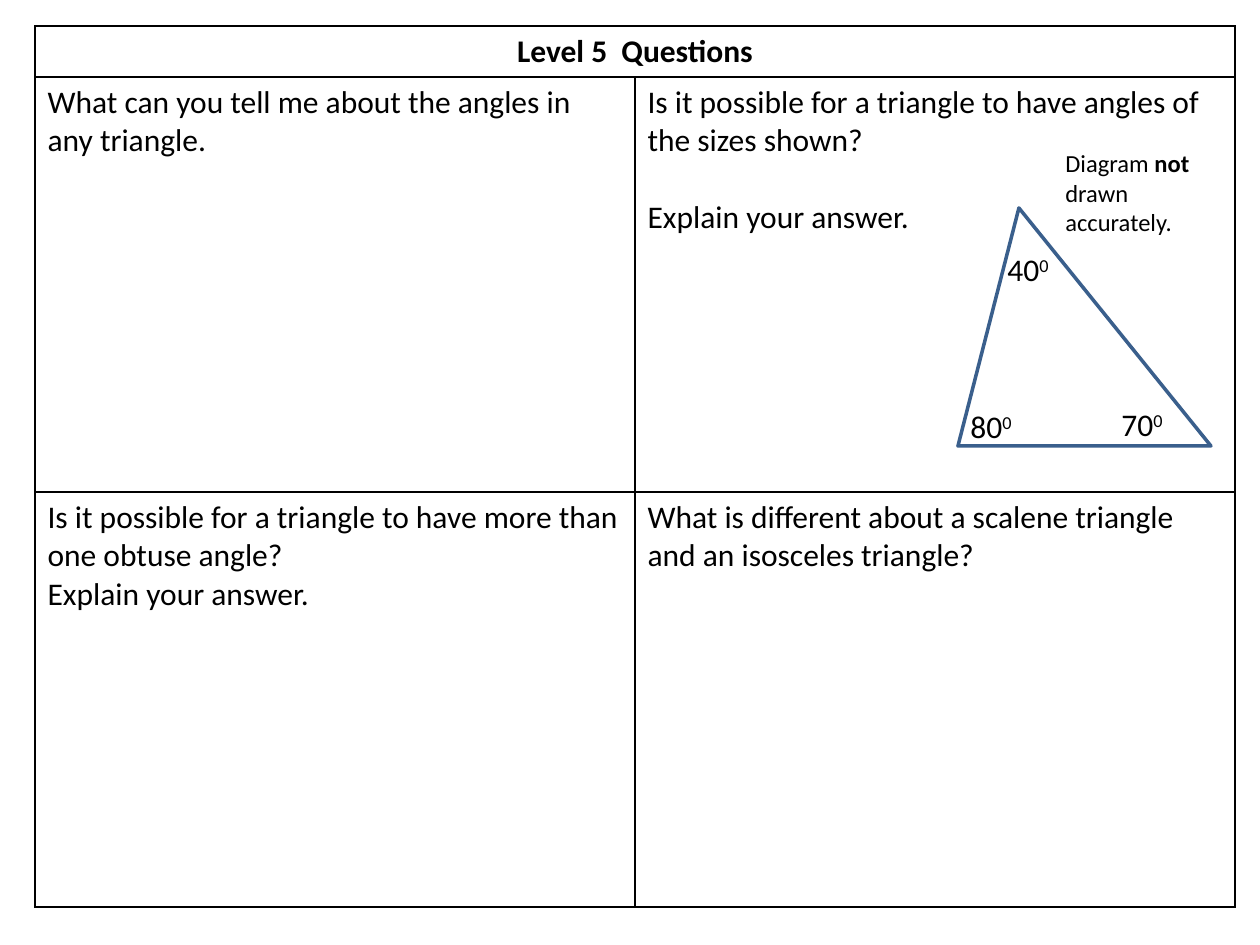
from dataclasses import dataclass

from lxml.etree import SubElement
from pptx import Presentation
from pptx.dml.color import RGBColor as RGB
from pptx.enum.shapes import MSO_SHAPE as SHAPE
from pptx.enum.text import MSO_AUTO_SIZE as AUTO, PP_ALIGN as ALIGN
from pptx.oxml.ns import qn
from pptx.util import Pt

PX = 914400 / 126
COLORS = {"text": "000000", "border": "000000", "triangle": "3A5F8C"}
BODY = {"name": "Calibri", "size": Pt(18), "bold": False}
BOLD = {**BODY, "bold": True}
NOTE = {**BODY, "size": Pt(14)}
NOTE_BOLD = {**NOTE, "bold": True}
LINE_GAP = Pt(22)


@dataclass
class Run:
    text: str
    fmt: dict
    raised: bool = False


@dataclass
class Label:
    x: int
    y: int
    w: int
    h: int
    runs: list[Run]


@dataclass
class Question:
    row: int
    col: int
    lines: list[str]
    gap: int = 0


def emu(px: int) -> int:
    return round(px * PX)


def box(*lengths: int) -> list[int]:
    return [emu(n) for n in lengths]


def add_run(p, run: Run) -> None:
    r = p.add_run()
    r.text = run.text
    for name, value in run.fmt.items():
        setattr(r.font, name, value)
    r.font.color.rgb = RGB.from_string(COLORS["text"])
    if run.raised:
        r._r.get_or_add_rPr().set("baseline", "30000")


def style_cell(cell) -> None:
    tcPr = cell._tc.get_or_add_tcPr()
    for side in ("lnL", "lnR", "lnT", "lnB"):
        ln = SubElement(tcPr, qn(f"a:{side}"), w=str(Pt(1)))
        fill = SubElement(ln, qn("a:solidFill"))
        SubElement(fill, qn("a:srgbClr"), val=COLORS["border"])
    cell.fill.background()


def add_question_table(s, title: str, questions: list[Question]) -> None:
    tbl = s.shapes.add_table(3, 2, *box(35, 26, 1200, 881)).table
    tbl.first_row = tbl.horz_banding = False
    for col in tbl.columns:
        col.width = emu(600)
    for row, height in zip(tbl.rows, (51, 415, 415)):
        row.height = emu(height)
    for cell in tbl.iter_cells():
        style_cell(cell)
    tbl.cell(0, 0).merge(tbl.cell(0, 1))
    p = tbl.cell(0, 0).text_frame.paragraphs[0]
    p.alignment = ALIGN.CENTER
    add_run(p, Run(title, BOLD))
    for q in questions:
        tf = tbl.cell(q.row, q.col).text_frame
        for i, line in enumerate(q.lines):
            p = tf.add_paragraph() if i else tf.paragraphs[0]
            if i:
                p.space_before = q.gap
            add_run(p, Run(line, BODY))


def add_triangle(s) -> None:
    sp = s.shapes.add_shape(SHAPE.ISOSCELES_TRIANGLE, *box(958, 208, 253, 238))
    sp.adjustments[0] = 0.241
    sp.shadow.inherit = False
    sp.fill.background()
    sp.line.color.rgb = RGB.from_string(COLORS["triangle"])
    sp.line.width = Pt(2)


def add_label(s, label: Label) -> None:
    tf = s.shapes.add_textbox(*box(label.x, label.y, label.w, label.h)).text_frame
    tf.word_wrap = True
    tf.auto_size = AUTO.SHAPE_TO_FIT_TEXT
    for run in label.runs:
        add_run(tf.paragraphs[0], run)


def angle(x: int, y: int, degrees: str) -> Label:
    return Label(x, y, 102, 50, [Run(degrees, BODY), Run("0", BODY, raised=True)])


EXPLAIN = "Explain your answer."
QUESTIONS = [
    Question(1, 0, ["What can you tell me about the angles in any triangle."]),
    Question(1, 1, ["Is it possible for a triangle to have angles of the sizes shown?",
                    EXPLAIN], LINE_GAP),
    Question(2, 0, ["Is it possible for a triangle to have more than one obtuse angle?",
                    EXPLAIN]),
    Question(2, 1, ["What is different about a scalene triangle and an isosceles triangle?"]),
]
LABELS = [
    angle(995, 244, "40"),
    angle(958, 401, "80"),
    angle(1109, 399, "70"),
    Label(1053, 142, 179, 102, [Run("Diagram ", NOTE), Run("not ", NOTE_BOLD),
                                Run("drawn accurately.", NOTE)]),
]


def main() -> None:
    prs = Presentation()
    prs.slide_width, prs.slide_height = box(1260, 945)
    s = prs.slides.add_slide(prs.slide_layouts[6])
    add_question_table(s, "Level 5  Questions", QUESTIONS)
    add_triangle(s)
    for label in LABELS:
        add_label(s, label)
    prs.save("out.pptx")


if __name__ == "__main__":
    main()
